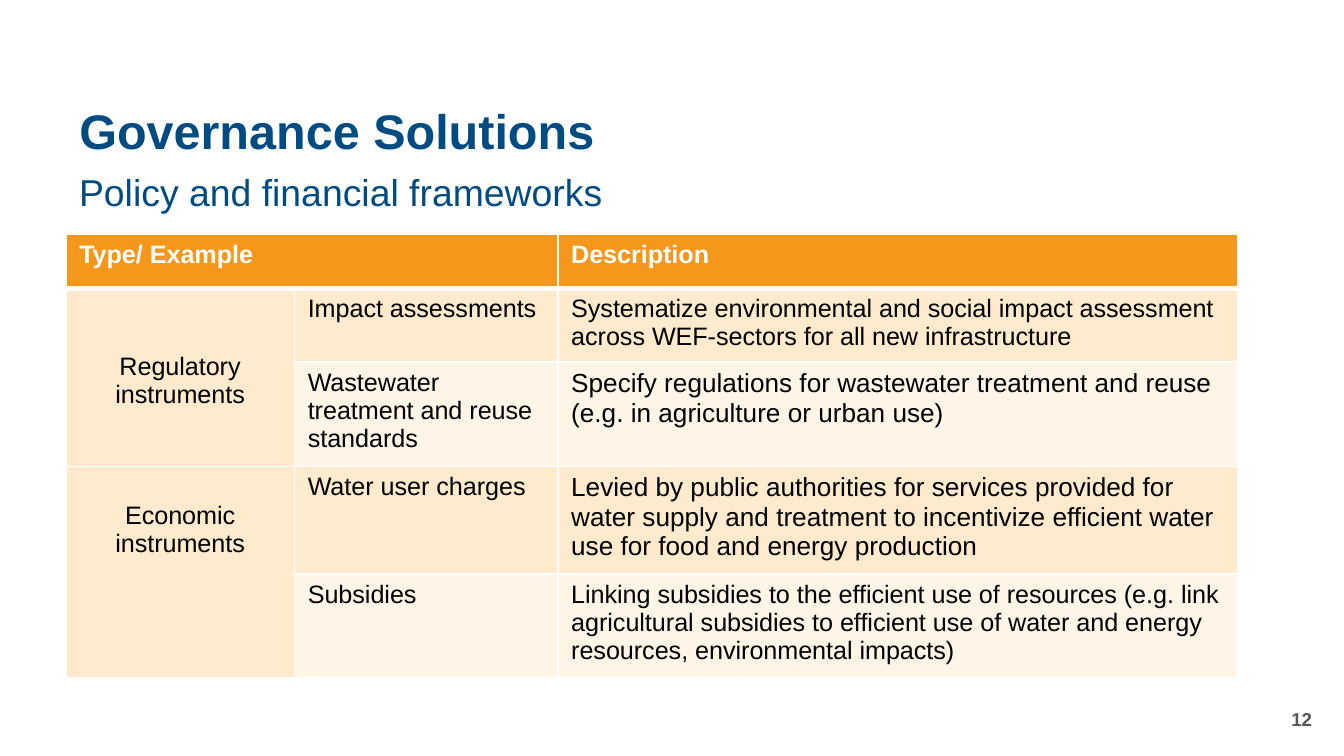
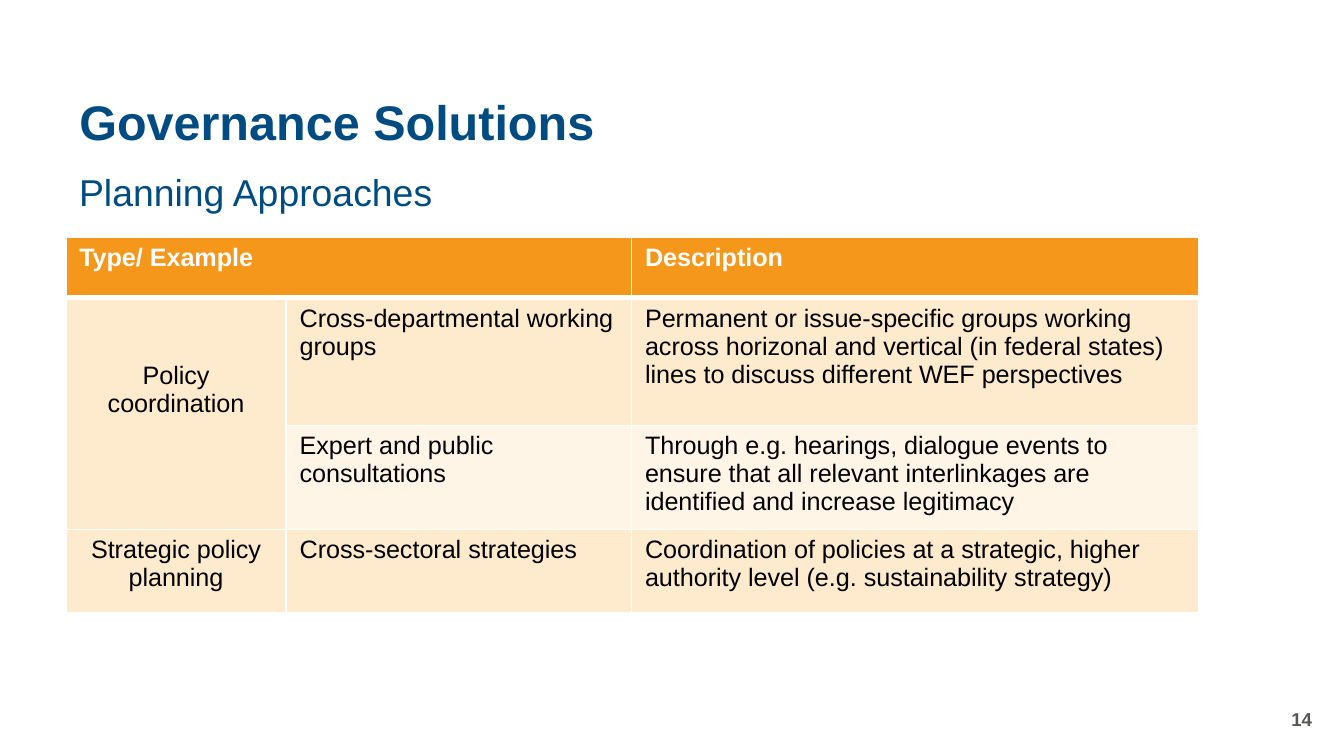
from lxml import etree
from pptx import Presentation
from pptx import util as u
from pptx.dml.color import RGBColor
from pptx.enum import text as t
from pptx.oxml.ns import qn

BLUE = RGBColor(0x00, 0x4C, 0x82)
ORANGE = RGBColor(0xF4, 0x97, 0x1A)
PEACH = RGBColor(0xFE, 0xEA, 0xCC)
CREAM = RGBColor(0xFF, 0xF5, 0xE7)
GREY = RGBColor(0x57, 0x57, 0x56)
BLACK = RGBColor(0, 0, 0)
WHITE = RGBColor(255, 255, 255)

GRID = u.Inches(0.1)
LEFT, WIDE = 4.9, 93.7

DECK = [
    dict(
        sub="Policy and financial frameworks", num="12", top=7, head=17.4,
        cols=[17, 19.6, 50.6], rows=[4.05, 5.5, 7.3, 8, 7.7],
        big=[(2, 2), (3, 2)],
        merge=[(1, 2, 4.8), (3, 4, 2.65)],
        body=[
            ["Regulatory instruments", "Impact assessments",
             "Systematize environmental and social impact assessment across "
             "WEF-sectors for all new infrastructure"],
            ["", "Wastewater treatment and reuse standards",
             "Specify regulations for wastewater treatment and reuse "
             "(e.g. in agriculture or urban use)"],
            ["Economic instruments", "Water user charges",
             "Levied by public authorities for services provided for water supply "
             "and treatment to incentivize efficient water use for food and "
             "energy production"],
            ["", "Subsidies",
             "Linking subsidies to the efficient use of resources (e.g. link "
             "agricultural subsidies to efficient use of water and energy "
             "resources, environmental impacts)"],
        ],
    ),
    dict(
        sub="Planning Approaches", num="14", top=6.35, head=17.65,
        cols=[16.4, 25.7, 42.2], rows=[4.5, 9.5, 7.3, 6.2],
        big=[],
        merge=[(1, 2, 4.8)],
        body=[
            ["Policy coordination", "Cross-departmental working groups",
             "Permanent or issue-specific groups working across horizonal and "
             "vertical (in federal states) lines to discuss different WEF "
             "perspectives"],
            ["", "Expert and public consultations",
             "Through e.g. hearings, dialogue events to ensure that all relevant "
             "interlinkages are identified and increase legitimacy"],
            ["Strategic policy planning", "Cross-sectoral strategies",
             "Coordination of policies at a strategic, higher authority level "
             "(e.g. sustainability strategy)"],
        ],
    ),
]


def grid(*cells):
    return [int(c * GRID) for c in cells]


def write(frame, words, size, color, bold=False, align=t.PP_ALIGN.LEFT):
    para = frame.paragraphs[0]
    para.alignment = align
    run = para.add_run()
    run.text = words
    run.font.name = "Arial"
    run.font.size = u.Pt(size)
    run.font.bold = bold
    run.font.color.rgb = color
    return para


prs = Presentation()
prs.slide_width = u.Inches(10)
prs.slide_height = prs.slide_width * 9 // 16

for page in DECK:
    slide = prs.slides.add_slide(prs.slide_layouts[5])

    title = slide.shapes.title
    title.left, title.top, title.width, title.height = grid(LEFT, page["top"], WIDE, 5.9)
    title.text_frame.vertical_anchor = t.MSO_ANCHOR.MIDDLE
    write(title.text_frame, "Governance Solutions", 26, BLUE, True).line_spacing = 0.9

    sub = slide.shapes.add_textbox(*grid(LEFT, 13, WIDE, 3)).text_frame
    sub.word_wrap = True
    sub.margin_left, sub.margin_top, sub.margin_right, sub.margin_bottom = grid(1, 0, 0.8, 0)
    write(sub, page["sub"], 20, BLUE).line_spacing = 0.9

    num = slide.shapes.add_textbox(*grid(76.1, 52, 22.5, 3)).text_frame
    num.word_wrap = True
    num.vertical_anchor = t.MSO_ANCHOR.MIDDLE
    write(num, page["num"], 10, GREY, True, t.PP_ALIGN.RIGHT)

    cols, rows = page["cols"], page["rows"]
    place = grid(LEFT, page["head"], sum(cols), sum(rows))
    table = slide.shapes.add_table(len(rows), len(cols), *place).table
    table.horz_banding = False
    for col, size in zip(table.columns, grid(*cols)):
        col.width = size
    for row, size in zip(table.rows, grid(*rows)):
        row.height = size

    table.cell(0, 0).merge(table.cell(0, 1))
    for first, last, drop in page["merge"]:
        cell = table.cell(first, 0)
        cell.merge(table.cell(last, 0))
        cell.margin_top = grid(drop)[0]
        cell.margin_bottom = 0

    lines = [["Type/ Example", "", "Description"]] + page["body"]
    for r, line in enumerate(lines):
        for c, words in enumerate(line):
            cell = table.cell(r, c)
            cell.fill.solid()
            band = PEACH if c == 0 or r % 2 else CREAM
            cell.fill.fore_color.rgb = ORANGE if r == 0 else band
            if words:
                size = 14 if (r, c) in page["big"] else 13.5
                side = t.PP_ALIGN.CENTER if r and c == 0 else t.PP_ALIGN.LEFT
                write(cell.text_frame, words, size, BLACK if r else WHITE, r == 0, side)
            else:
                para = cell.text_frame.paragraphs[0]
                etree.SubElement(para._p, qn("a:endParaRPr"), sz="800")
            props = cell._tc.get_or_add_tcPr()
            for i, edge in enumerate("LRTB"):
                thick = (r, edge) in [(0, "B"), (1, "T")]
                rule = etree.Element(qn("a:ln" + edge), w=str(u.Pt(3 if thick else 1)))
                fill = etree.SubElement(rule, qn("a:solidFill"))
                etree.SubElement(fill, qn("a:srgbClr"), val=str(WHITE))
                props.insert(i, rule)

prs.save("out.pptx")
